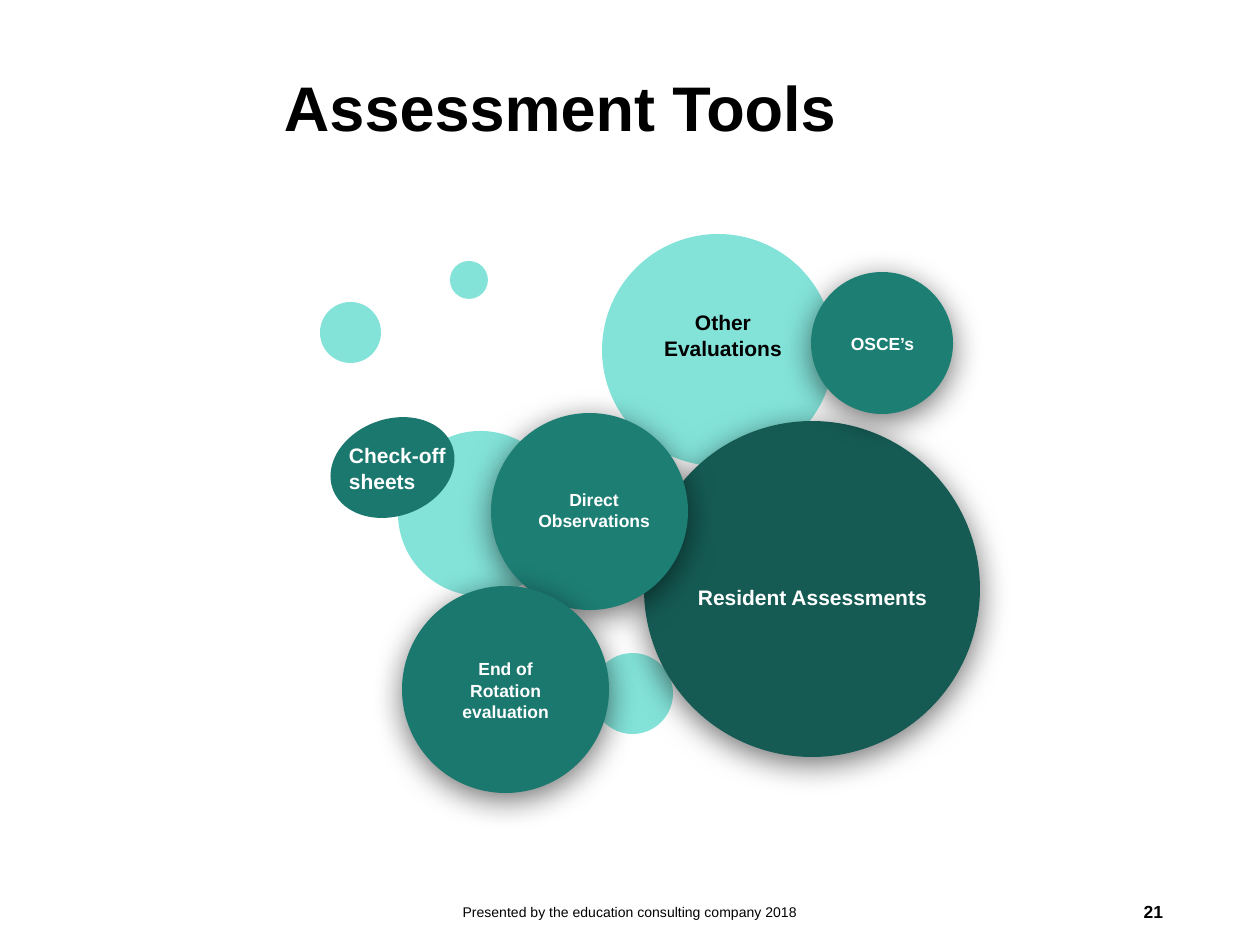
from lxml.etree import SubElement
from pptx import Presentation
from pptx.dml.color import RGBColor
from pptx.enum.shapes import MSO_SHAPE
from pptx.enum.text import MSO_ANCHOR, PP_ALIGN
from pptx.oxml.ns import qn
from pptx.util import Emu, Pt

SCALE = 914400 / 126
PALE, TEAL, MID, DARK = "83E3D9", "1B786E", "1D7E74", "155B54"
BLACK, WHITE = "000000", "FFFFFF"

# left, top, diameter
BUBBLES = [
    (592, 653, 81),
    (320, 302, 61),
    (398, 431, 165),
    (602, 234, 232),
    (450, 261, 38),
]

# left, top, diameter, fill, label, label box, text size
TOOLS = [
    (644, 421, 336, DARK, "Resident Assessments", (684, 517, 257, 160), 12),
    (491, 413, 197, MID, "Direct Observations", (523, 444, 142, 132), 10),
    (402, 586, 207, TEAL, "End of Rotation evaluation", (432, 625, 147, 130), 10),
    (811, 272, 142, MID, "OSCE’s", (834, 296, 97, 95), 10),
]


def px(n):
    return Emu(round(n * SCALE))


def color(code):
    return RGBColor.from_string(code)


def add_oval(slide, box, fill):
    oval = slide.shapes.add_shape(MSO_SHAPE.OVAL, *map(px, box))
    oval.shadow.inherit = False
    oval.fill.solid()
    oval.fill.fore_color.rgb = color(fill)
    oval.line.fill.background()
    return oval


def add_glow(oval):
    """Put a soft shadow under the oval."""
    effects = oval._element.spPr.find(qn("a:effectLst"))
    shade = SubElement(effects, qn("a:outerShdw"), blurRad=str(Pt(18)),
                       dist=str(Pt(4)), dir="5400000", algn="ctr", rotWithShape="0")
    tint = SubElement(shade, qn("a:srgbClr"), val=BLACK)
    SubElement(tint, qn("a:alpha"), val="55000")


def add_text(slide, text, box, size, ink=BLACK, bold=True, align=PP_ALIGN.CENTER,
             anchor=MSO_ANCHOR.MIDDLE, inset=13):
    frame = slide.shapes.add_textbox(*map(px, box)).text_frame
    frame.word_wrap = True
    frame.vertical_anchor = anchor
    frame.margin_left = frame.margin_right = px(13)
    frame.margin_top = frame.margin_bottom = px(inset)
    frame.text = text
    line = frame.paragraphs[0]
    line.alignment = align
    font = line.runs[0].font
    font.name, font.size, font.bold = "Arial", Pt(size), bold
    font.color.rgb = color(ink)
    return line


def main():
    deck = Presentation()
    deck.slide_width, deck.slide_height = px(1260), px(945)
    slide = deck.slides.add_slide(deck.slide_layouts[6])

    title = add_text(slide, "Assessment Tools", (271, 53, 937, 116), 36,
                     align=PP_ALIGN.LEFT)
    title.line_spacing = 0.9

    for left, top, size in BUBBLES:
        add_oval(slide, (left, top, size, size), PALE)
    add_oval(slide, (344, 404, 97, 127), TEAL).rotation = 250.4

    for left, top, size, fill, label, box, points in TOOLS:
        add_glow(add_oval(slide, (left, top, size, size), fill))
        add_text(slide, label, box, points, WHITE)

    add_text(slide, "Check-off sheets", (336, 430, 134, 92), 12, WHITE,
             align=PP_ALIGN.LEFT, anchor=MSO_ANCHOR.TOP)
    add_text(slide, "Other Evaluations", (635, 297, 176, 54), 12,
             anchor=MSO_ANCHOR.TOP)

    add_text(slide, "Presented by the education consulting company 2018",
             (417, 887, 426, 50), 8, bold=False, inset=6)
    add_text(slide, "21", (892, 895, 284, 50), 10, align=PP_ALIGN.RIGHT,
             anchor=MSO_ANCHOR.TOP, inset=6)
    deck.save("out.pptx")


if __name__ == "__main__":
    main()
